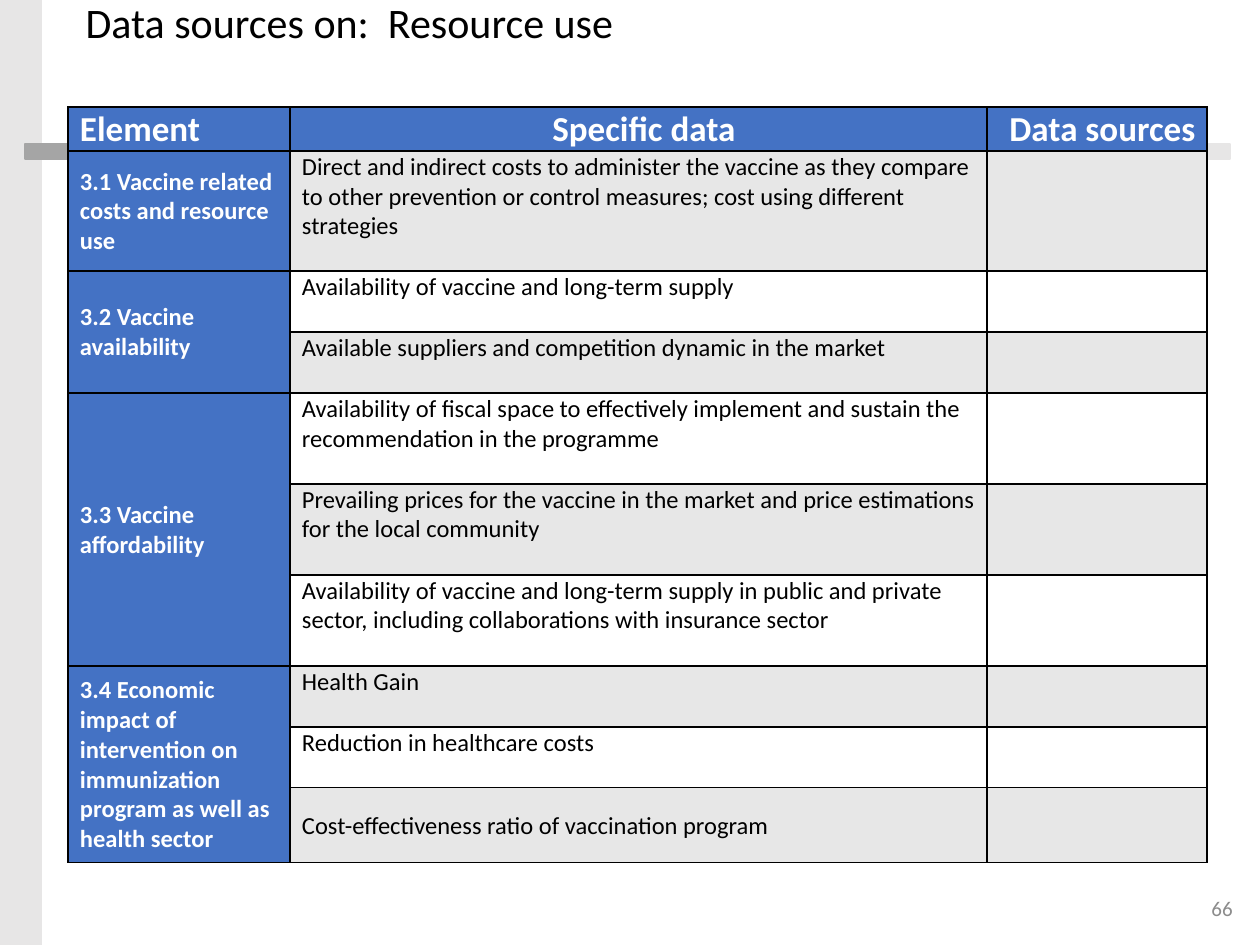
from lxml import etree
from pptx import Presentation
from pptx.dml.color import RGBColor
from pptx.enum.shapes import MSO_SHAPE
from pptx.enum.text import MSO_ANCHOR, MSO_AUTO_SIZE, PP_ALIGN
from pptx.oxml.ns import qn
from pptx.util import Pt

RECTANGLE = MSO_SHAPE.RECTANGLE
TOP, MIDDLE = MSO_ANCHOR.TOP, MSO_ANCHOR.MIDDLE
LEFT, CENTER, RIGHT = PP_ALIGN.LEFT, PP_ALIGN.CENTER, PP_ALIGN.RIGHT
NO_FIT = MSO_AUTO_SIZE.NONE
EMU_PER_PX = 914400 / 126

COLORS = {
    "ink": "000000",
    "paper": "FFFFFF",
    "heading": "4472C4",
    "band": "E7E7E7",
    "pale": "E7E6E6",
    "accent": "A5A5A5",
    "number": "8C8C8C",
}

HEADINGS = [("Element", LEFT), ("Specific data", CENTER), ("Data sources", CENTER)]
ELEMENTS = [
    ("3.1 Vaccine related costs and resource use", [
        ("Direct and indirect costs to administer the vaccine as they compare to other "
         "prevention or control measures; cost using different strategies", 120, TOP),
    ]),
    ("3.2 Vaccine availability", [
        ("Availability of vaccine and long-term supply", 61, TOP),
        ("Available suppliers and competition dynamic in the market", 61, TOP),
    ]),
    ("3.3 Vaccine affordability", [
        ("Availability of fiscal space to effectively implement and sustain the "
         "recommendation in the programme", 91, TOP),
        ("Prevailing prices for the vaccine in the market and price estimations for the "
         "local community", 91, TOP),
        ("Availability of vaccine and long-term supply in public and private sector, "
         "including collaborations with insurance sector", 91, TOP),
    ]),
    ("3.4 Economic impact of intervention on immunization program as well as health sector", [
        ("Health Gain", 61, TOP),
        ("Reduction in healthcare costs", 61, TOP),
        ("Cost-effectiveness ratio of vaccination program", 75, MIDDLE),
    ]),
]
COLUMN_WIDTHS = [222, 697, 220]
HEADING_HEIGHT = 44


def px(length):
    return round(length * EMU_PER_PX)


def rgb(name):
    return RGBColor.from_string(COLORS[name])


def apply(target, values):
    for attribute, value in values.items():
        setattr(target, attribute, value)


class SlideBuilder:
    font = "Calibri"

    def __init__(self, presentation):
        self.slide = presentation.slides.add_slide(presentation.slide_layouts[5])

    def add_text(self, frame, text, size, color, bold=False, align=LEFT):
        paragraph = frame.paragraphs[0]
        paragraph.alignment = align
        run = paragraph.add_run()
        run.text = text
        apply(run.font, {"name": self.font, "size": Pt(size), "bold": bold})
        run.font.color.rgb = rgb(color)
        return paragraph

    def place(self, shape, box):
        apply(shape, dict(zip(("left", "top", "width", "height"), map(px, box))))

    def title(self, text, box):
        heading = self.slide.shapes.title
        self.place(heading, box)
        apply(heading.text_frame, {
            "word_wrap": True, "auto_size": NO_FIT,
            "vertical_anchor": TOP, "margin_top": px(12),
        })
        self.add_text(heading.text_frame, text, 24, "ink").line_spacing = 0.9

    def bar(self, box, color, outlined=True):
        bar = self.slide.shapes.add_shape(RECTANGLE, *map(px, box))
        bar.shadow.inherit = False
        bar.fill.solid()
        bar.fill.fore_color.rgb = rgb(color)
        if outlined:
            bar.line.color.rgb = rgb(color)
            bar.line.width = Pt(1)
        else:
            bar.line.fill.background()

    def page_number(self, text, box):
        frame = self.slide.shapes.add_textbox(*map(px, box)).text_frame
        apply(frame, {"word_wrap": True, "vertical_anchor": MIDDLE})
        self.add_text(frame, text, 12, "number", align=RIGHT)

    def table(self, left, top, widths, heights):
        box = map(px, (left, top, sum(widths), sum(heights)))
        table = self.slide.shapes.add_table(len(heights), len(widths), *box).table
        for column, width in zip(table.columns, widths):
            column.width = px(width)
        for row, height in zip(table.rows, heights):
            row.height = px(height)
        for cell in table.iter_cells():
            self.border(cell)
        return table

    def border(self, cell):
        properties = cell._tc.get_or_add_tcPr()
        for side in ("a:lnL", "a:lnR", "a:lnT", "a:lnB"):
            line = etree.SubElement(properties, qn(side), w=str(Pt(1)))
            fill = etree.SubElement(line, qn("a:solidFill"))
            etree.SubElement(fill, qn("a:srgbClr"), val=COLORS["ink"])

    def cell(self, cell, fill, text="", size=14, color="ink", bold=False,
             align=LEFT, anchor=MIDDLE):
        cell.fill.solid()
        cell.fill.fore_color.rgb = rgb(fill)
        apply(cell, {
            "margin_left": px(12), "margin_right": px(1), "margin_top": px(1),
            "margin_bottom": 0, "vertical_anchor": anchor,
        })
        if text:
            self.add_text(cell.text_frame, text, size, color, bold, align)


def main():
    presentation = Presentation()
    apply(presentation, {"slide_width": px(1260), "slide_height": px(945)})
    builder = SlideBuilder(presentation)

    builder.bar((0, 0, 42, 945), "pale", outlined=False)
    builder.bar((25, 144, 118, 15), "accent")
    builder.bar((154, 144, 1076, 15), "pale")
    builder.page_number("66", (1176, 883, 69, 50))
    builder.title("Data sources on:  Resource use", (73, -10, 1228, 115))

    heights = [HEADING_HEIGHT] + [height for _, data in ELEMENTS for _, height, _ in data]
    sources = builder.table(68, 107, COLUMN_WIDTHS, heights)
    for column, (heading, align) in enumerate(HEADINGS):
        builder.cell(sources.cell(0, column), "heading", heading, 20, "paper", True, align)

    row = 1
    for element, data in ELEMENTS:
        first = sources.cell(row, 0)
        if len(data) > 1:
            first.merge(sources.cell(row + len(data) - 1, 0))
        builder.cell(first, "heading", element, color="paper", bold=True)
        for detail, _, anchor in data:
            band = "band" if row % 2 else "paper"
            builder.cell(sources.cell(row, 1), band, detail, anchor=anchor)
            builder.cell(sources.cell(row, 2), band)
            row += 1

    presentation.save("out.pptx")


if __name__ == "__main__":
    main()
